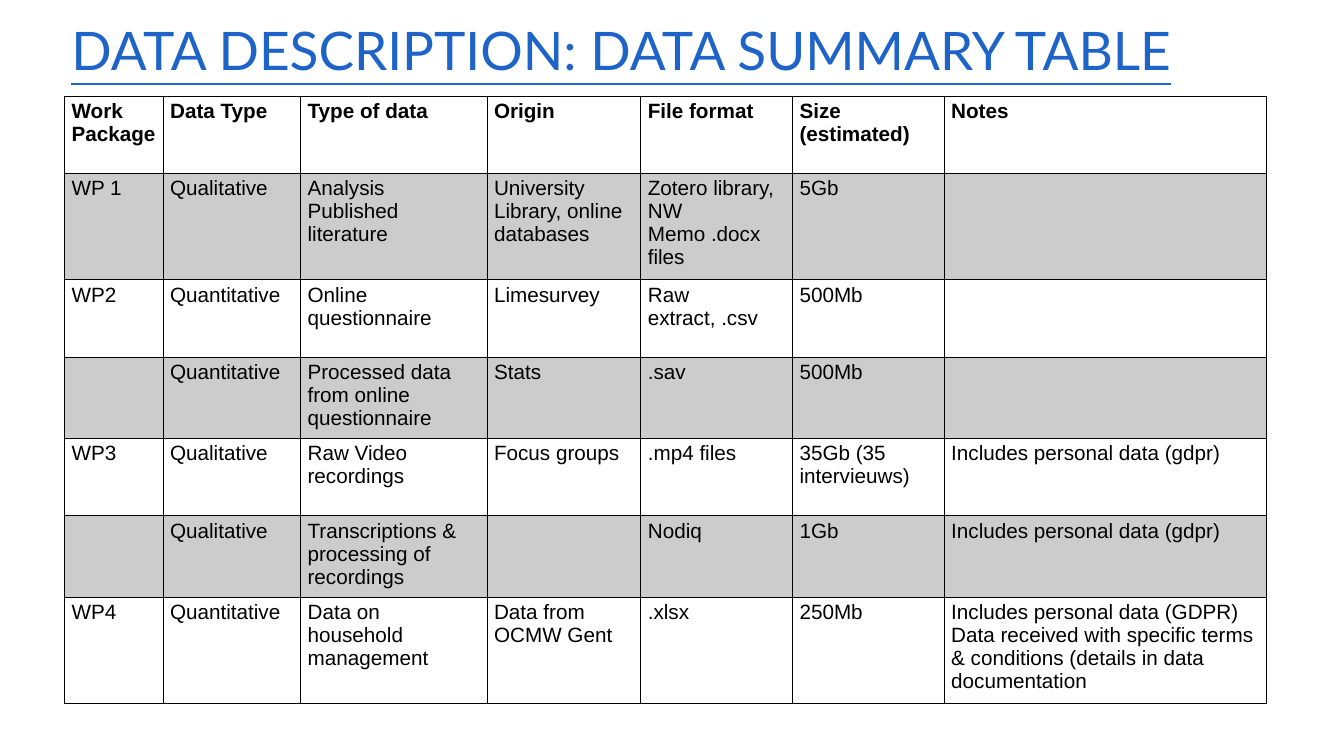
import pptx
import pptx.util
import pptx.dml.color
import pptx.enum.text
import pptx.oxml.ns
import lxml.etree

PX = 9144
BLUE = pptx.dml.color.RGBColor(0x1E, 0x64, 0xC8)
BLACK = pptx.dml.color.RGBColor(0x00, 0x00, 0x00)
TITLE_FORMAT = {"name": "Lato", "size": pptx.util.Pt(54), "underline": True}
CELL_FORMAT = {"name": "Arial", "size": pptx.util.Pt(21)}
COLUMN_WIDTHS = [139, 194, 263, 217, 214, 214, 455]
ROW_HEIGHT = 109
ROWS = [
    ["Work Package", "Data Type", "Type of data", "Origin", "File format", "Size (estimated)", "Notes"],
    ["WP 1", "Qualitative", "Analysis Published literature", "University Library, online databases",
     "Zotero library, NW Memo .docx files", "5Gb", ""],
    ["WP2", "Quantitative", "Online questionnaire", "Limesurvey", "Raw extract, .csv", "500Mb", ""],
    ["", "Quantitative", "Processed data from online questionnaire", "Stats", ".sav", "500Mb", ""],
    ["WP3", "Qualitative", "Raw Video recordings", "Focus groups", ".mp4 files",
     "35Gb (35 intervieuws)", "Includes personal data (gdpr)"],
    ["", "Qualitative", "Transcriptions & processing of recordings", "", "Nodiq", "1Gb",
     "Includes personal data (gdpr)"],
    ["WP4", "Quantitative", "Data on household management", "Data from OCMW Gent", ".xlsx", "250Mb",
     "Includes personal data (GDPR)\n"
     "Data received with specific terms & conditions (details in data documentation"],
]


def format_font(font, values, color):
    for key, value in values.items():
        setattr(font, key, value)
    font.color.rgb = color


def add_borders(cell, widths):
    properties = cell._tc.get_or_add_tcPr()
    for position, (side, width) in enumerate(widths.items()):
        line = lxml.etree.Element(pptx.oxml.ns.qn("a:ln" + side), w=str(pptx.util.Pt(width)))
        solid = lxml.etree.SubElement(line, pptx.oxml.ns.qn("a:solidFill"))
        lxml.etree.SubElement(solid, pptx.oxml.ns.qn("a:srgbClr"), val=str(BLACK))
        properties.insert(position, line)


presentation = pptx.Presentation()
presentation.slide_width = 1896 * PX
presentation.slide_height = 1067 * PX
slide = presentation.slides.add_slide(presentation.slide_layouts[6])

title = slide.shapes.add_textbox(91 * PX, 28 * PX, 1718 * PX, 94 * PX).text_frame
title.word_wrap = True
title.vertical_anchor = pptx.enum.text.MSO_ANCHOR.MIDDLE
title.text = "DATA DESCRIPTION: DATA SUMMARY TABLE"
title.paragraphs[0].line_spacing = 0.9
format_font(title.paragraphs[0].runs[0].font, TITLE_FORMAT, BLUE)

summary = slide.shapes.add_table(
    len(ROWS), len(COLUMN_WIDTHS), 91 * PX, 136 * PX,
    sum(COLUMN_WIDTHS) * PX, len(ROWS) * ROW_HEIGHT * PX).table
summary.first_row = False
summary.horz_banding = False
for column, width in zip(summary.columns, COLUMN_WIDTHS):
    column.width = width * PX

for row_index, texts in enumerate(ROWS):
    summary.rows[row_index].height = ROW_HEIGHT * PX
    for column_index, text in enumerate(texts):
        cell = summary.cell(row_index, column_index)
        cell.text = text
        for paragraph in cell.text_frame.paragraphs:
            for run in paragraph.runs:
                format_font(run.font, {**CELL_FORMAT, "bold": row_index == 0}, BLACK)
        if row_index % 2:
            cell.fill.solid()
            cell.fill.fore_color.rgb = BLACK
            shade = cell._tc.tcPr.find(".//" + pptx.oxml.ns.qn("a:srgbClr"))
            lxml.etree.SubElement(shade, pptx.oxml.ns.qn("a:alpha"), val="20000")
        else:
            cell.fill.background()
        add_borders(cell, {"L": 1, "R": 1, "T": 2 if row_index == 1 else 1,
                           "B": 2 if row_index == 0 else 1})

presentation.save("out.pptx")
